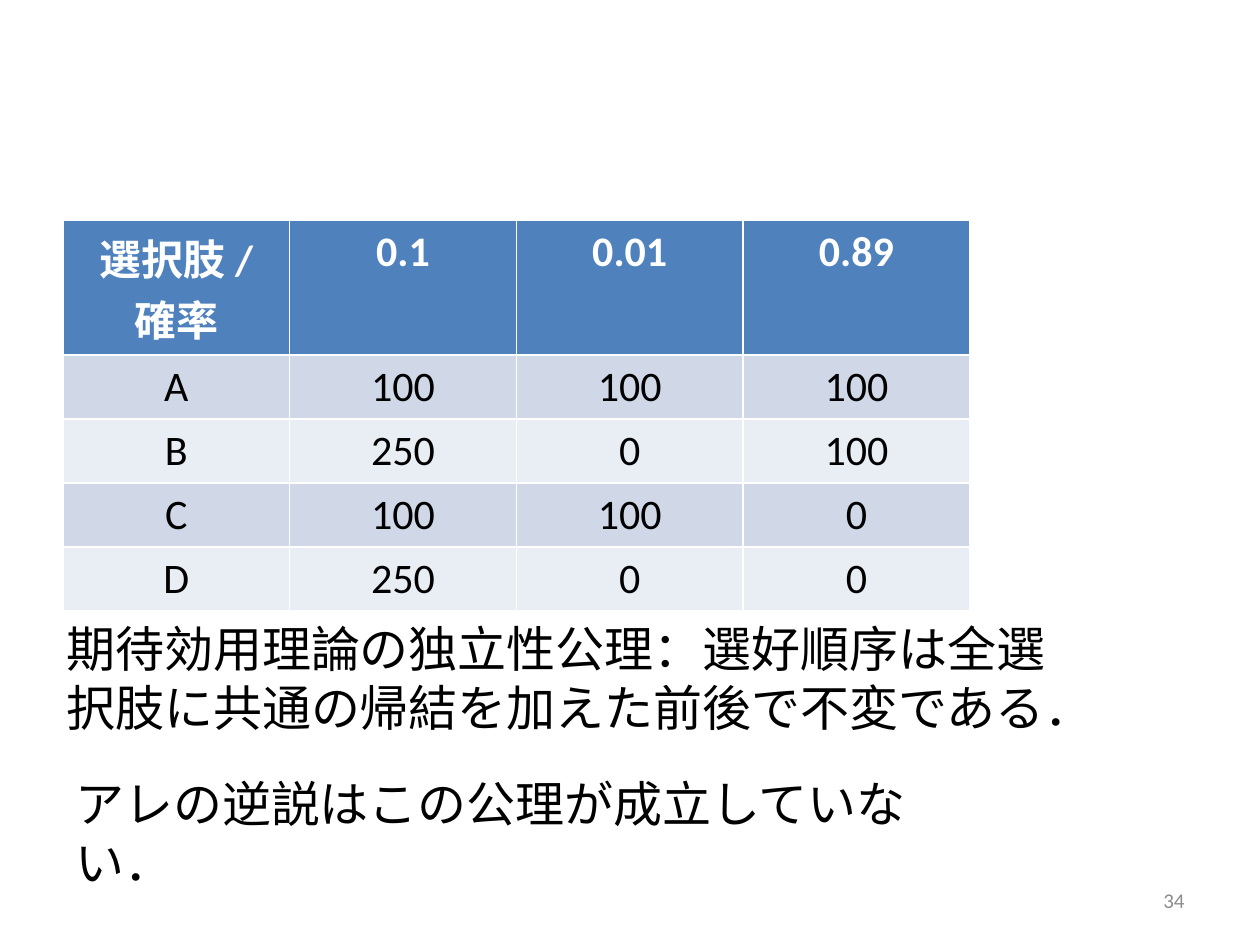
from pptx import Presentation
from pptx.dml.color import RGBColor
from pptx.enum.text import MSO_ANCHOR as Anchor, PP_ALIGN as Align
from pptx.util import Cm, Pt

COLORS = {
    "header": "4F81BD",
    "odd": "D0D8E8",
    "even": "E9EDF4",
    "white": "FFFFFF",
    "text": "000000",
    "number": "8C8C8C",
}

PAYOFFS = [
    ["選択肢 / 確率", "0.1", "0.01", "0.89"],
    ["A", "100", "100", "100"],
    ["B", "250", "0", "100"],
    ["C", "100", "100", "0"],
    ["D", "250", "0", "0"],
]


class SlideBuilder:
    font = "Calibri"

    def __init__(self, slide):
        self.s = slide

    def add_run(self, tf, text, size, color, align=Align.LEFT, bold=False):
        p = tf.paragraphs[0]
        p.alignment = align
        r = p.add_run()
        r.text = text
        r.font.name = self.font
        r.font.size = Pt(size)
        r.font.bold = bold
        r.font.color.rgb = RGBColor.from_string(COLORS[color])

    def add_text(self, box, text, size=28, color="text", align=Align.LEFT,
                 anchor=Anchor.TOP):
        """Add a wrapping text box; box is left, top, width, height in cm."""
        sp = self.s.shapes.add_textbox(*map(Cm, box))
        tf = sp.text_frame
        tf.word_wrap = True
        tf.vertical_anchor = anchor
        self.add_run(tf, text, size, color, align)

    def add_table(self, left, top, col_width, row_heights, rows):
        """Add a table with a header row and banded rows; lengths in cm."""
        n_cols = len(rows[0])
        table = self.s.shapes.add_table(
            len(rows), n_cols, Cm(left), Cm(top),
            Cm(col_width * n_cols), Cm(sum(row_heights))).table
        for col in table.columns:
            col.width = Cm(col_width)
        for i, values in enumerate(rows):
            table.rows[i].height = Cm(row_heights[i])
            header = i == 0
            fill = "header" if header else "odd" if i % 2 else "even"
            for j, value in enumerate(values):
                cell = table.cell(i, j)
                cell.fill.solid()
                cell.fill.fore_color.rgb = RGBColor.from_string(COLORS[fill])
                self.add_run(cell.text_frame, value, 24,
                             "white" if header else "text", Align.CENTER, header)


def main():
    prs = Presentation()
    prs.slide_width, prs.slide_height = Cm(25.4), Cm(19.05)
    slide = SlideBuilder(prs.slides.add_slide(prs.slide_layouts[6]))

    slide.add_table(1.27, 4.45, 4.57, [2.3] + [1.28] * 4, PAYOFFS)
    slide.add_text((18.2, 17.65, 5.93, 1.01), "34", 12, "number",
                   Align.RIGHT, Anchor.MIDDLE)
    slide.add_text((1.09, 12.34, 21.2, 2.65),
                   "期待効用理論の独立性公理：選好順序は全選択肢に共通の帰結を加えた前後で不変である．")
    slide.add_text((1.27, 15.47, 18.15, 1.45),
                   "アレの逆説はこの公理が成立していない．")

    prs.save("out.pptx")


if __name__ == "__main__":
    main()
